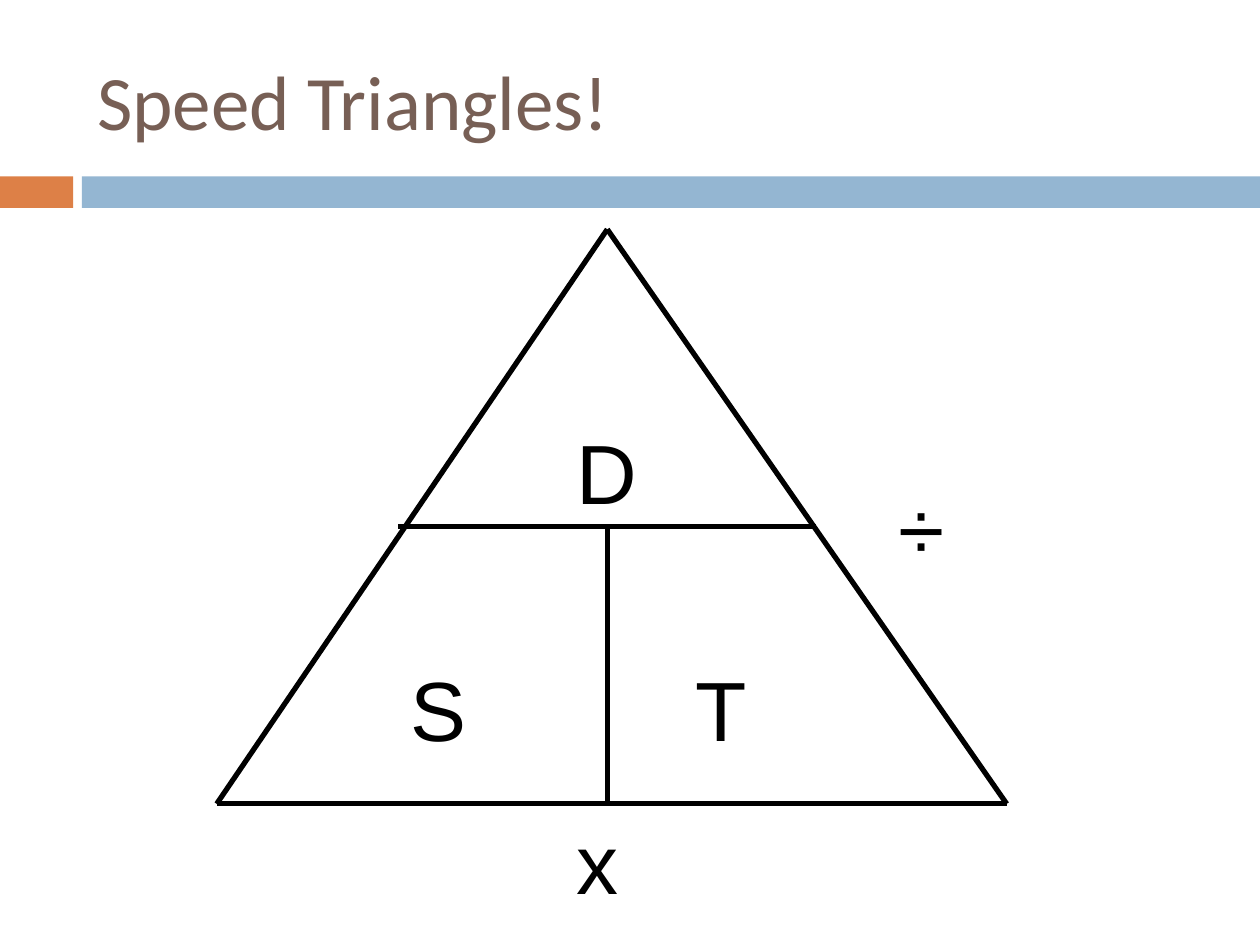
from lxml.etree import SubElement
from pptx import Presentation
from pptx.dml.color import RGBColor
from pptx.enum.shapes import MSO_CONNECTOR as CONNECTOR, MSO_SHAPE as SHAPE
from pptx.enum.text import MSO_ANCHOR as ANCHOR, MSO_AUTO_SIZE as AUTO_SIZE, PP_ALIGN as ALIGN
from pptx.oxml.ns import qn
from pptx.util import Inches, Pt

COLUMNS, ROWS = 100, 75
WIDTH, HEIGHT = Inches(10), Inches(7.5)


def col(n):
    return round(WIDTH * n / COLUMNS)


def row(n):
    return round(HEIGHT * n / ROWS)


def cells(left, top, width, height):
    return col(left), row(top), col(width), row(height)


def color(hex_code):
    return RGBColor.from_string(hex_code)


def write(frame, text, font="Arial", size=48, fill="000000", anchor=ANCHOR.TOP, wrap=True):
    frame.word_wrap = wrap
    frame.vertical_anchor = anchor
    paragraph = frame.paragraphs[0]
    paragraph.alignment = ALIGN.LEFT
    run = paragraph.add_run()
    run.text = text
    run.font.name = font
    run.font.size = Pt(size)
    run.font.color.rgb = color(fill)


def add_title(slide, text):
    title = slide.shapes.title
    title.left, title.top, title.width, title.height = cells(6.7, 2.5, 89.2, 10.8)
    write(title.text_frame, text, font="Calibri", size=44, fill="775F55", anchor=ANCHOR.MIDDLE)


def add_band(slide, left, width, fill):
    band = slide.shapes.add_shape(SHAPE.RECTANGLE, *cells(left, 14, width, 2.5))
    band.shadow.inherit = False
    band.fill.solid()
    band.fill.fore_color.rgb = color(fill)
    band.line.fill.background()


def add_edge(group, start, end):
    edge = group.shapes.add_connector(
        CONNECTOR.STRAIGHT, col(start[0]), row(start[1]), col(end[0]), row(end[1]))
    edge.line.color.rgb = color("000000")
    edge.line.width = Pt(3)
    SubElement(edge._element.spPr, qn("a:effectLst"))


def add_triangle(slide):
    apex, base_left, base_right = (48.2, 18.2), (17.2, 63.8), (79.9, 63.8)
    divider_left, divider_right = (31.6, 41.8), (64.8, 41.8)
    divider_middle, base_middle = (apex[0], 41.8), (apex[0], 63.8)
    triangle = slide.shapes.add_group_shape()
    for start, end in (
        (base_left, apex),
        (base_left, base_right),
        (apex, base_right),
        (divider_left, divider_right),
        (divider_middle, base_middle),
    ):
        add_edge(triangle, start, end)


def add_letter(slide, text, left, top, width, wrap):
    letter = slide.shapes.add_textbox(*cells(left, top, width, 9))
    write(letter.text_frame, text, wrap=wrap)
    letter.text_frame.auto_size = AUTO_SIZE.SHAPE_TO_FIT_TEXT


def main():
    deck = Presentation()
    deck.slide_width, deck.slide_height = WIDTH, HEIGHT
    slide = deck.slides.add_slide(deck.slide_layouts[5])
    add_band(slide, 0, 5.8, "DD8047")
    add_band(slide, 6.5, 93.5, "94B6D2")
    add_title(slide, "Speed Triangles!")
    add_triangle(slide)
    for text, left, top, width, wrap in (
        ("D", 44.8, 32.9, 6.8, False),
        ("S", 31.6, 51.7, 6.5, False),
        ("T", 54.2, 51.7, 8.7, True),
        ("÷", 70.3, 37.3, 5.7, True),
        ("x", 44.8, 63.8, 5.3, False),
    ):
        add_letter(slide, text, left, top, width, wrap)
    deck.save("out.pptx")


if __name__ == "__main__":
    main()
